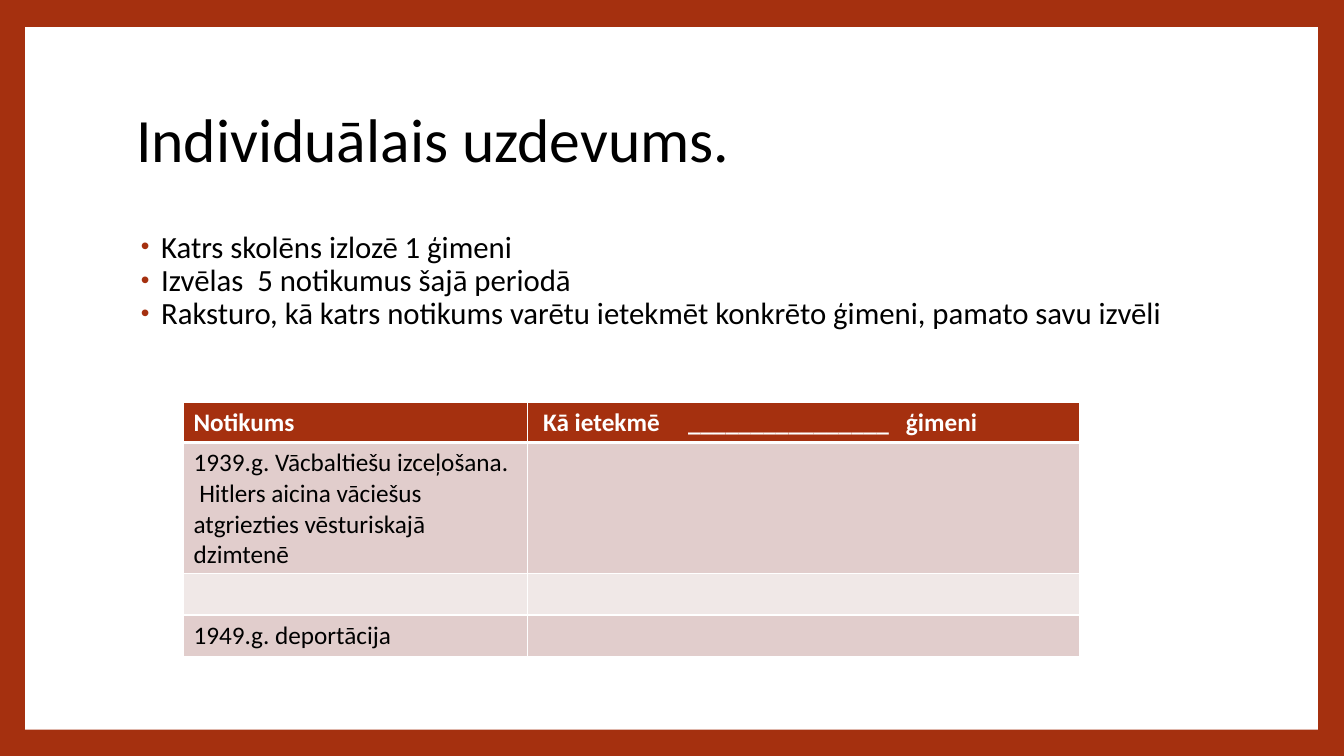
from lxml import etree
from pptx import Presentation, util as u
from pptx.dml.color import RGBColor
from pptx.enum import shapes, text
from pptx.oxml.ns import qn

RUST, WHITE, BLACK = "A5300F", "FFFFFF", "000000"
LEFT, WIDE = u.Inches(1.25), u.Inches(10.8)


def color(code):
    return RGBColor.from_string(code)


def write(para, words, size, code=BLACK, bold=False):
    """Add one formatted run to a paragraph."""
    run = para.add_run()
    run.text = words
    font = run.font
    font.name, font.size, font.bold = "Calibri", u.Pt(size), bold
    font.color.rgb = color(code)


deck = Presentation()
deck.slide_width, deck.slide_height = u.Inches(13.33), u.Inches(7.5)
slide = deck.slides.add_slide(deck.slide_layouts[5])
slide.background.fill.solid()
slide.background.fill.fore_color.rgb = color(RUST)

# White panel, behind the title
panel = slide.shapes.add_shape(
    shapes.MSO_SHAPE.RECTANGLE,
    u.Inches(0.25), u.Inches(0.27), u.Inches(12.82), u.Inches(6.97))
panel.shadow.inherit = False
panel.fill.solid()
panel.fill.fore_color.rgb = color(WHITE)
panel.line.fill.background()
slide.shapes.element.insert(2, panel.element)

# Title
title = slide.shapes.title
title.left, title.top = LEFT, u.Inches(0.67)
title.width, title.height = WIDE, u.Inches(1.48)
title.text_frame.vertical_anchor = text.MSO_ANCHOR.MIDDLE
head = title.text_frame.paragraphs[0]
head.alignment = text.PP_ALIGN.LEFT
head.line_spacing = 0.9
write(head, "Individuālais uzdevums.", 44)

# Bulleted task steps
steps = [
    "Katrs skolēns izlozē 1 ģimeni",
    "Izvēlas  5 notikumus šajā periodā",
    "Raksturo, kā katrs notikums varētu ietekmēt konkrēto ģimeni, pamato savu izvēli",
]
body = slide.shapes.add_textbox(LEFT, u.Inches(2.25), WIDE, u.Inches(1.4)).text_frame
body.word_wrap = True
for i, step in enumerate(steps):
    para = body.add_paragraph() if i else body.paragraphs[0]
    para.line_spacing = 0.9
    write(para, step, 22)
    props = para._p.get_or_add_pPr()
    props.set("marL", str(u.Inches(0.25)))
    props.set("indent", str(u.Inches(-0.2)))
    tint = etree.SubElement(props, qn("a:buClr"))
    etree.SubElement(tint, qn("a:srgbClr"), val=RUST)
    etree.SubElement(props, qn("a:buSzPct"), val="80000")
    etree.SubElement(props, qn("a:buFont"), typeface="Arial")
    etree.SubElement(props, qn("a:buChar"), char="•")

# Table of events: each cell is a list of paragraphs
rows = [
    [["Notikums"], [" Kā ietekmē     ________________   ģimeni"]],
    [["1939.g. Vācbaltiešu izceļošana.",
      " Hitlers aicina vāciešus atgriezties vēsturiskajā dzimtenē"], []],
    [[], []],
    [["1949.g. deportācija"], []],
]
fills = [RUST, "E1CDCC", "F0E8E7", "E1CDCC"]
highs = [0.4, 1.3, 0.41, 0.41]
wides = [3.41, 5.48]
grid = slide.shapes.add_table(
    len(rows), len(wides), u.Inches(1.82), u.Inches(3.99),
    u.Inches(sum(wides)), u.Inches(sum(highs))).table
for col, wide in zip(grid.columns, wides):
    col.width = u.Inches(wide)
for r, row in enumerate(rows):
    grid.rows[r].height = u.Inches(highs[r])
    for c, lines in enumerate(row):
        cell = grid.cell(r, c)
        cell.fill.solid()
        cell.fill.fore_color.rgb = color(fills[r])
        for i, line in enumerate(lines):
            frame = cell.text_frame
            para = frame.add_paragraph() if i else frame.paragraphs[0]
            write(para, line, 18, BLACK if r else WHITE, r == 0)
        props = cell._tc.get_or_add_tcPr()
        for i, side in enumerate(["lnL", "lnR", "lnT", "lnB"]):
            thick = (r, side) in [(0, "lnB"), (1, "lnT")]
            edge = etree.Element(qn("a:" + side), w=str(u.Pt(3 if thick else 1)))
            paint = etree.SubElement(edge, qn("a:solidFill"))
            etree.SubElement(paint, qn("a:srgbClr"), val=WHITE)
            props.insert(i, edge)

deck.save("out.pptx")
